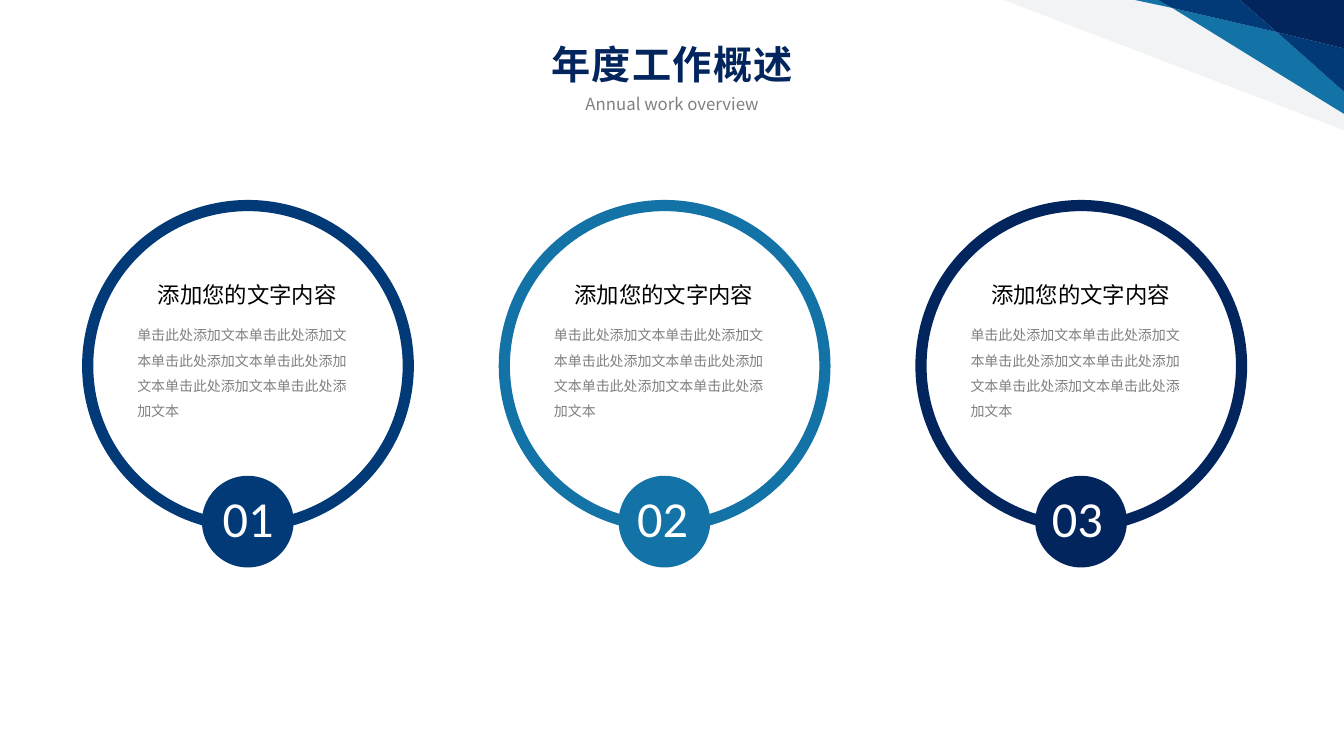
from dataclasses import dataclass

from pptx import Presentation
from pptx import util as u
from pptx.dml.color import RGBColor
from pptx.enum import shapes, text
from pptx.oxml.ns import qn


@dataclass(frozen=True)
class Theme:
    navy: str = "03255D"
    blue: str = "023977"
    sky: str = "1372A6"
    pale: str = "F1F3F4"
    grey: str = "808080"
    black: str = "000000"
    white: str = "FFFFFF"
    font: str = "Noto Sans CJK SC"
    digit: str = "Calibri"
    title: int = 28
    sub: int = 12
    head: int = 16
    body: int = 10
    num: int = 36
    ring: int = 8


class Deck:
    def __init__(self, theme, width, height):
        self.theme = theme
        self.prs = Presentation()
        self.prs.slide_width, self.prs.slide_height = u.Cm(width), u.Cm(height)
        self.slide = self.prs.slides.add_slide(self.prs.slide_layouts[6])

    def facet(self, points, color):
        """Fill a polygon whose corners are given in centimetres."""
        start, *rest = [(u.Cm(x), u.Cm(y)) for x, y in points]
        pen = self.slide.shapes.build_freeform(*start)
        pen.add_line_segments(rest, close=True)
        self.paint(pen.convert_to_shape(), fill=color)

    def disc(self, x, y, size, **look):
        box = map(u.Cm, (x, y, size, size))
        self.paint(self.slide.shapes.add_shape(shapes.MSO_SHAPE.OVAL, *box), **look)

    def paint(self, shape, fill=None, line=None):
        shape.shadow.inherit = False
        for part, color in ((shape.fill, fill), (shape.line.fill, line)):
            if color:
                part.solid()
                part.fore_color.rgb = RGBColor.from_string(color)
            else:
                part.background()
        if line:
            shape.line.width = u.Pt(self.theme.ring)

    def label(self, words, box, size, color, face=None, wrap=True, bold=False,
              space=None, **form):
        """Write one paragraph; form holds its paragraph format values."""
        frame = self.slide.shapes.add_textbox(*map(u.Cm, box)).text_frame
        frame.word_wrap = wrap
        para = frame.paragraphs[0]
        for key, value in form.items():
            setattr(para, key, value)
        run = para.add_run()
        run.text = words
        face = face or self.theme.font
        look = {"size": u.Pt(size), "bold": bold, "name": face}
        for key, value in look.items():
            setattr(run.font, key, value)
        run.font.color.rgb = RGBColor.from_string(color)
        props = run.font._element
        props.append(props.makeelement(qn("a:ea"), {"typeface": face}))
        if space:
            props.set("spc", str(space))

    def save(self):
        self.prs.save("out.pptx")


def corner(deck):
    t = deck.theme
    edge = 33.87
    cross, fork = (29.54, 0.2), (32.18, 0.81)
    top, side, low = (31.24, 0), (edge, 1.22), (edge, 2.31)
    facets = [
        ([(25.3, 0), (edge, 3.28), (edge, 0)], t.pale),
        ([(28.6, 0), cross, (29.18, 0)], t.sky),
        ([cross, (edge, 2.87), low, fork], t.sky),
        ([fork, low, side], t.blue),
        ([top, fork, side, (edge, 0)], t.navy),
        ([(29.18, 0), cross, fork, top], t.blue),
    ]
    for points, color in facets:
        deck.facet(points, color)


def column(deck, i, color):
    t = deck.theme
    x = 2.21 + 10.5 * i
    deck.disc(x, 5.18, 8.08, line=color)
    deck.disc(x + 2.88, 11.99, 2.31, fill=color)
    deck.label("单击此处添加文本" * 6, (x + 1, 7.9, 6.07, 3.12), t.body, t.grey,
               line_spacing=1.5, space_before=u.Pt(13.3))
    deck.label("添加您的文字内容", (x + 1.52, 6.96, 5.03, 0.94), t.head, t.black,
               wrap=False)
    deck.label(f"{i + 1:02}", (5.36 + 10.45 * i, 12.14, 1.95, 1.8), t.num, t.white,
               face=t.digit, wrap=False)


def main():
    t = Theme()
    deck = Deck(t, 33.87, 19.05)
    mid = text.PP_ALIGN.CENTER
    corner(deck)
    deck.label("年度工作概述", (0, 0.89, 33.87, 1.45), t.title, t.navy, bold=True,
               space=100, alignment=mid)
    deck.label("Annual work overview", (12.8, 2.24, 8.28, 0.76), t.sub, t.grey,
               alignment=mid)
    for i, color in enumerate((t.blue, t.sky, t.navy)):
        column(deck, i, color)
    deck.save()


if __name__ == "__main__":
    main()
